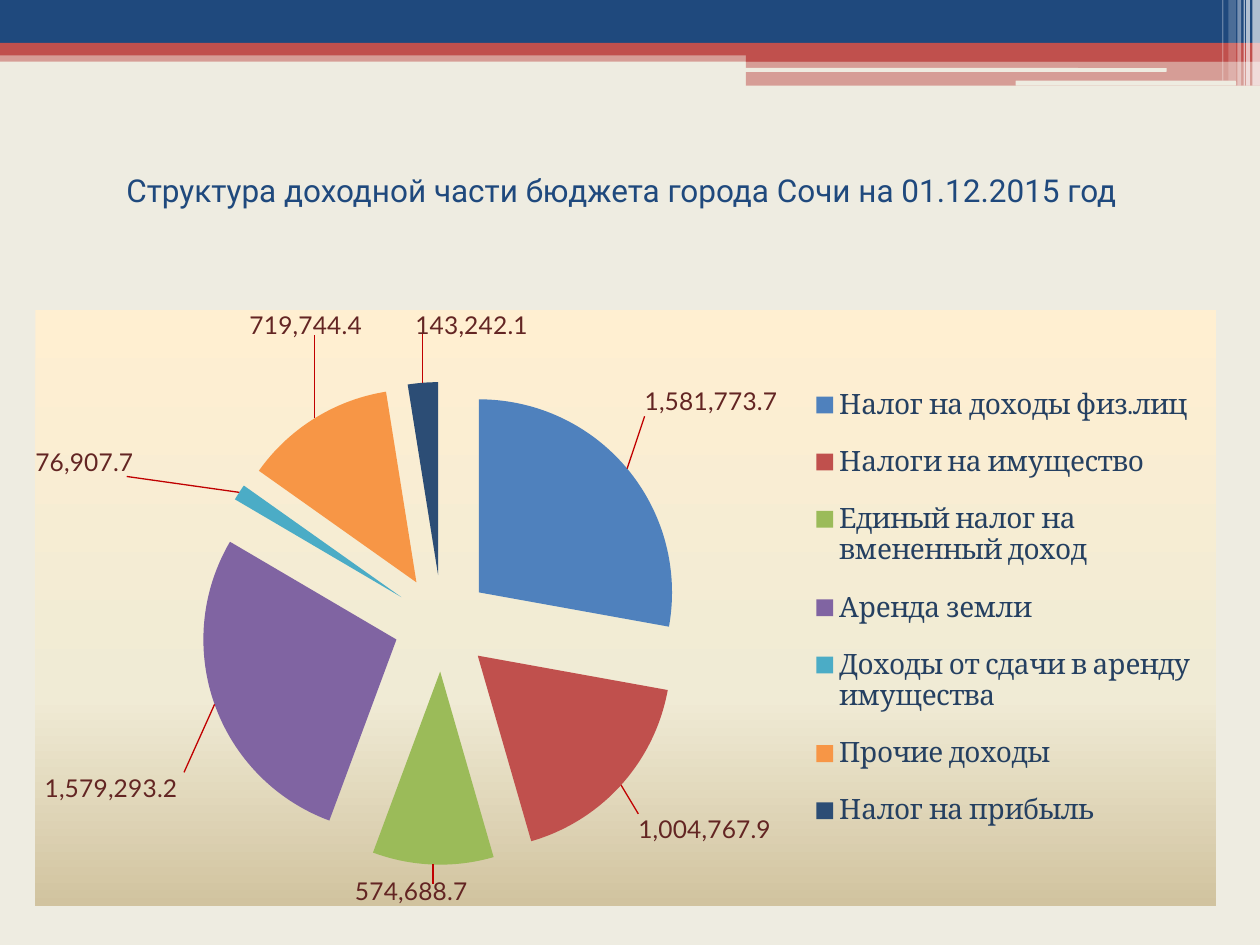
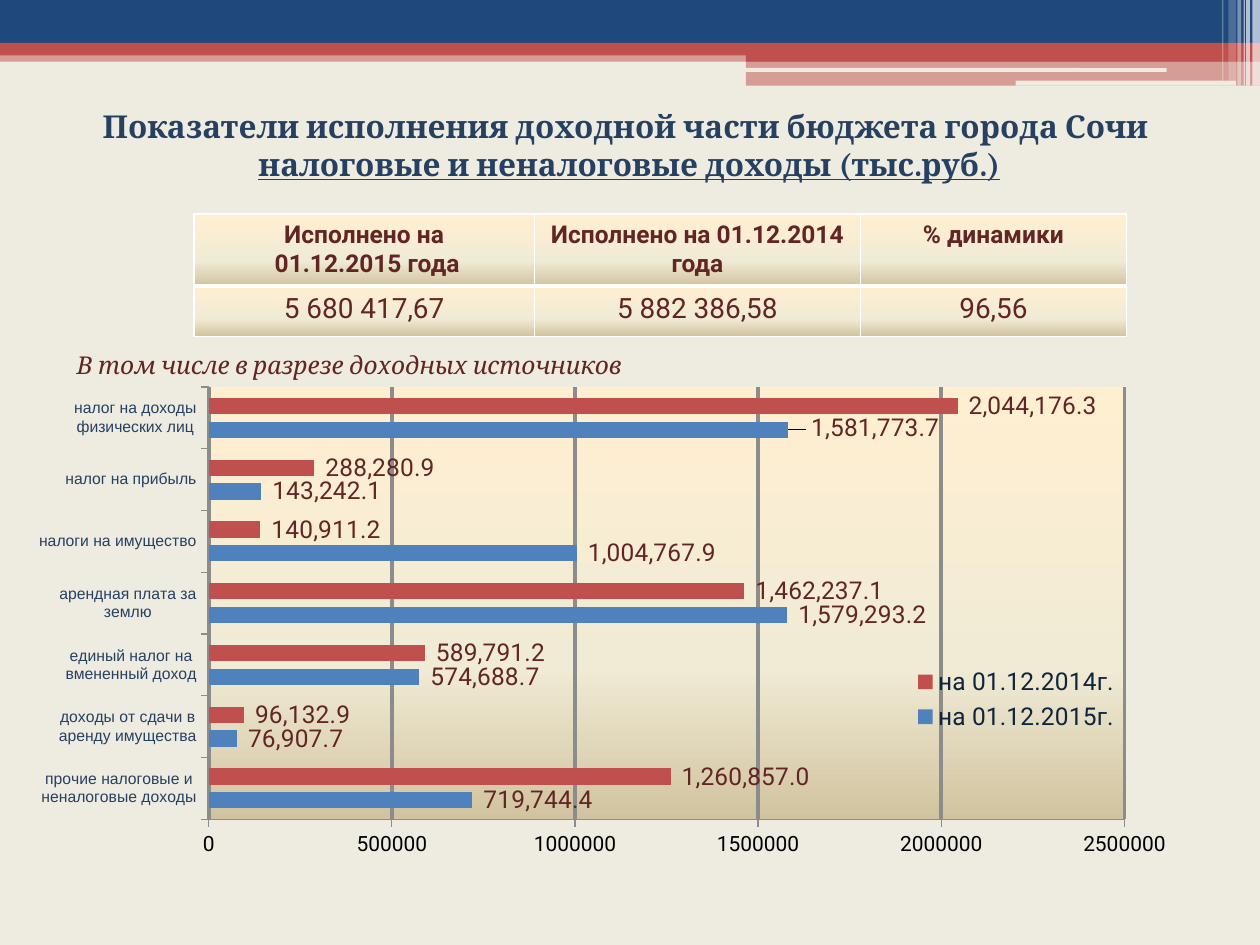
import pptx
import pptx.chart.data
import pptx.dml.color
import pptx.enum.chart
import pptx.enum.shapes
import pptx.enum.text
import pptx.oxml
import pptx.oxml.ns
import pptx.util
from pptx.util import Inches

COLOURS = {
    "paper": "EEECE1", "navy": "1F497D", "red": "C0504D", "white": "FFFFFF",
    "heading": "254061", "wine": "632523", "ink": "0F243E", "black": "000000",
    "grid": "8C8C8C", "leader": "C00000", "blue": "4F81BD", "green": "9BBB59",
    "violet": "8064A2", "teal": "4BACC6", "orange": "F79646", "deep": "2C4D75",
}
SAND = [(0, "FFEFD1"), (65, "F0EBD5"), (100, "D1C39F")]
NS = ('xmlns:a="http://schemas.openxmlformats.org/drawingml/2006/main" '
      'xmlns:c="http://schemas.openxmlformats.org/drawingml/2006/chart"')
SERIF, SANS = "Cambria", "Roboto"

# left, top, width, height, colour, opacity in percent
BANDS = [
    (0, 0.4, 10, 0.09, "red", 50),
    (0, 0, 10, 0.34, "navy", 100),
    (0, 0.34, 10, 0.1, "red", 100),
    (5.92, 0.39, 4.08, 0.1, "red", 100),
    (5.92, 0.48, 4.08, 0.2, "red", 50),
]
SLOTS = [(5.91, 0.54, 3.35, 0.03, "paper", 100), (8.06, 0.64, 1.75, 0.04, "paper", 100)]
STRIPES = [  # left, width, height, opacity
    (9.94, 0.06, 0.68, 65), (9.89, 0.03, 0.68, 65), (9.87, 0.01, 0.68, 60),
    (9.82, 0.03, 0.68, 40), (9.75, 0.06, 0.64, 20), (9.7, 0.01, 0.64, 30),
]


def rgb(name):
    return pptx.dml.color.RGBColor.from_string(COLOURS[name])


def xml(markup):
    """Build an element from markup whose first tag gets the namespaces."""
    head, rest = markup.split(">", 1)
    slash = "/" if head.endswith("/") else ""
    return pptx.oxml.parse_xml(f"{head.rstrip('/')} {NS}{slash}>{rest}")


def sand_fill():
    stops = "".join(f'<a:gs pos="{pos * 1000}"><a:srgbClr val="{colour}"/></a:gs>'
                    for pos, colour in SAND)
    return f'<a:gradFill><a:gsLst>{stops}</a:gsLst><a:lin ang="5400000" scaled="0"/></a:gradFill>'


def sand_properties():
    return xml(f"<c:spPr>{sand_fill()}<a:ln><a:noFill/></a:ln></c:spPr>")


def layout(x, y, w=None, h=None, inner=False):
    """Manual chart layout: a shift for a label, or a box on the chart edges."""
    target = '<c:layoutTarget val="inner"/>' if inner else ""
    modes = '<c:xMode val="edge"/><c:yMode val="edge"/>' if w else ""
    size = f'<c:w val="{w}"/><c:h val="{h}"/>' if w else ""
    return xml(f'<c:layout><c:manualLayout>{target}{modes}<c:x val="{x}"/>'
               f'<c:y val="{y}"/>{size}</c:manualLayout></c:layout>')


def set_font(font, size, colour, name, bold=False, italic=False, underline=False):
    font.size, font.name = pptx.util.Pt(size), name
    font.color.rgb = rgb(colour)
    font.bold, font.italic, font.underline = bold, italic, underline


def write(frame, text, align="LEFT", underlined_line=None, **style):
    """Fill a text frame, one paragraph per line of text."""
    for number, line in enumerate(text.split("\n")):
        paragraph = frame.paragraphs[0] if number == 0 else frame.add_paragraph()
        paragraph.alignment = getattr(pptx.enum.text.PP_ALIGN, align)
        run = paragraph.add_run()
        run.text = line
        set_font(run.font, underline=number == underlined_line, **style)


class Deck:
    def __init__(self):
        self.presentation = pptx.Presentation()
        self.presentation.slide_width = Inches(10)
        self.presentation.slide_height = Inches(7.5)
        self.slide = None

    def new_slide(self):
        self.slide = self.presentation.slides.add_slide(self.presentation.slide_layouts[6])
        background = self.slide.background.fill
        background.solid()
        background.fore_color.rgb = rgb("paper")
        for band in BANDS:
            self.block(*band)
        for slot in SLOTS:
            self.block(*slot, kind="ROUNDED_RECTANGLE")
        for left, width, height, opacity in STRIPES:
            self.block(left, 0, width, height, "white", opacity)

    def block(self, left, top, width, height, colour, opacity, kind="RECTANGLE"):
        block = self.slide.shapes.add_shape(
            getattr(pptx.enum.shapes.MSO_SHAPE, kind),
            Inches(left), Inches(top), Inches(width), Inches(height))
        block.shadow.inherit = False
        block.line.fill.background()
        block.fill.solid()
        block.fill.fore_color.rgb = rgb(colour)
        if opacity < 100:
            tint = block._element.spPr.find(".//" + pptx.oxml.ns.qn("a:srgbClr"))
            tint.append(xml(f'<a:alpha val="{opacity * 1000}"/>'))

    def text(self, left, top, width, height, text, anchor="TOP", **style):
        box = self.slide.shapes.add_textbox(
            Inches(left), Inches(top), Inches(width), Inches(height))
        box.text_frame.word_wrap = True
        box.text_frame.vertical_anchor = getattr(pptx.enum.text.MSO_ANCHOR, anchor)
        write(box.text_frame, text, **style)

    def table(self, left, top, widths, heights, rows):
        table = self.slide.shapes.add_table(
            len(rows), len(widths), Inches(left), Inches(top),
            Inches(sum(widths)), Inches(sum(heights))).table
        for column, width in zip(table.columns, widths):
            column.width = Inches(width)
        for number, (row, height) in enumerate(zip(rows, heights)):
            table.rows[number].height = Inches(height)
            head = number == 0
            for cell, text in zip(table.rows[number].cells, row):
                write(cell.text_frame, text, align="CENTER", size=14 if head else 16,
                      colour="wine", name=SANS, bold=head)
                properties = cell._tc.get_or_add_tcPr()
                for side in "LRTB":
                    heavy = (head and side == "B") or (not head and side == "T")
                    properties.append(xml(
                        f'<a:ln{side} w="{38100 if heavy else 12700}"><a:solidFill>'
                        f'<a:srgbClr val="{COLOURS["white"]}"/></a:solidFill></a:ln{side}>'))
                properties.append(xml(sand_fill()))

    def chart(self, kind, left, top, width, height, categories, series, plot_box,
              legend_box, legend_style):
        data = pptx.chart.data.CategoryChartData()
        data.categories = categories
        for name, values in series:
            data.add_series(name, values)
        chart = self.slide.shapes.add_chart(
            getattr(pptx.enum.chart.XL_CHART_TYPE, kind), Inches(left), Inches(top),
            Inches(width), Inches(height), data).chart
        chart.has_title = False
        set_font(chart.font, 18, "black", SERIF)
        area = chart._chartSpace.chart.plotArea
        for old in area.findall(pptx.oxml.ns.qn("c:layout")):
            area.remove(old)
        area.insert(0, layout(*plot_box, inner=True))
        chart.has_legend = True
        chart.legend.position = pptx.enum.chart.XL_LEGEND_POSITION.RIGHT
        chart.legend.include_in_layout = False
        set_font(chart.legend.font, **legend_style)
        legend = chart.legend._element
        for old in legend.findall(pptx.oxml.ns.qn("c:layout")):
            legend.remove(old)
        legend.find(pptx.oxml.ns.qn("c:legendPos")).addnext(layout(*legend_box))
        return chart

    def labels(self, series, number_format, style, position="OUTSIDE_END"):
        labels = series.data_labels
        labels.show_value = True
        labels.number_format, labels.number_format_is_linked = number_format, False
        labels.position = getattr(pptx.enum.chart.XL_LABEL_POSITION, position)
        set_font(labels.font, **style)
        return labels

    def shift_label(self, series, index, shift, number_format, style):
        label = series.points[index].data_label
        set_font(label.font, **style)
        label.position = pptx.enum.chart.XL_LABEL_POSITION.OUTSIDE_END
        place = layout(*shift)
        label._dLbl.find(pptx.oxml.ns.qn("c:idx")).addnext(place)
        place.addnext(xml(f'<c:numFmt formatCode="{number_format}" sourceLinked="0"/>'))


def income_structure(deck):
    deck.new_slide()
    deck.text(0.28, 0.92, 9.37, 1.17,
              "Структура доходной части бюджета города Сочи на 01.12.2015 год ",
              anchor="MIDDLE", align="CENTER", size=18, colour="navy", name=SANS)
    # source of income, amount, slice colour, label shift
    incomes = [
        ("Налог на доходы физ.лиц", 1581773.7, "blue", (0.01, -0.08)),
        ("Налоги на имущество", 1004767.9, "red", (0.01, 0.04)),
        ("Единый налог на вмененный доход", 574688.7, "green", (-0.01, 0.02)),
        ("Аренда земли", 1579293.2, "violet", (-0.02, 0.11)),
        ("Доходы от сдачи в аренду имущества", 76907.7, "teal", (-0.09, -0.02)),
        ("Прочие доходы", 719744.4, "orange", (0.06, -0.13)),
        ("Налог на прибыль", 143242.1, "deep", (0.05, -0.07)),
    ]
    names, amounts, colours, shifts = zip(*incomes)
    chart = deck.chart("PIE", 0.28, 2.46, 9.37, 4.73, names, [("Series 1", amounts)],
                       (0.067, 0.121, 0.555, 0.81), (0.65, 0.09, 0.34, 0.82),
                       dict(size=16, colour="heading", name=SERIF))
    chart._chartSpace.chart.addnext(sand_properties())
    pie = chart.plots[0].series[0]
    pie._element.find(pptx.oxml.ns.qn("c:tx")).addnext(xml('<c:explosion val="25"/>'))
    style, number_format = dict(size=14, colour="wine", name="Lato"), "#,##0.0_р_."
    labels = deck.labels(pie, number_format, style)
    for index, (colour, shift) in enumerate(zip(colours, shifts)):
        piece = pie.points[index].format.fill
        piece.solid()
        piece.fore_color.rgb = rgb(colour)
        deck.shift_label(pie, index, shift, number_format, style)
    group = labels._element
    for old in group.findall(pptx.oxml.ns.qn("c:showLeaderLines")):
        group.remove(old)
    group.append(xml('<c:showLeaderLines val="1"/>'))
    group.append(xml(f'<c:leaderLines><c:spPr><a:ln w="9525"><a:solidFill><a:srgbClr '
                     f'val="{COLOURS["leader"]}"/></a:solidFill></a:ln></c:spPr></c:leaderLines>'))


def income_performance(deck):
    deck.new_slide()
    sources = [  # source of income, 2015, 2014
        ("прочие налоговые и неналоговые доходы", 719744.4, 1260857.0),
        ("доходы от сдачи в аренду имущества", 76907.7, 96132.9),
        ("единый налог на вмененный доход", 574688.7, 589791.2),
        ("арендная плата за землю", 1579293.2, 1462237.1),
        ("налоги на имущество", 1004767.9, 140911.2),
        ("налог на прибыль", 143242.1, 288280.9),
        ("налог на доходы физических лиц", 1581773.7, 2044176.3),
    ]
    names, in_2015, in_2014 = zip(*sources)
    chart = deck.chart("BAR_CLUSTERED", 0.31, 2.94, 9.57, 4.54, names,
                       [("на 01.12.2015г.", in_2015), ("на 01.12.2014г.", in_2014)],
                       (0.139, 0.029, 0.761, 0.756), (0.72, 0.51, 0.18, 0.13),
                       dict(size=14, colour="ink", name=SANS))
    chart._chartSpace.chart.plotArea.append(sand_properties())
    bars = chart.plots[0]
    bars.gap_width, bars.overlap, bars.vary_by_categories = 134, -45, False
    style, number_format = dict(size=14, colour="wine", name=SANS), "_-* #,##0.0_р_._-"
    for series, colour in zip(bars.series, ("blue", "red")):
        series.format.fill.solid()
        series.format.fill.fore_color.rgb = rgb(colour)
        deck.labels(series, number_format, style)
    deck.shift_label(bars.series[0], 6, (0.01, -0.003), number_format, style)

    amounts = chart.value_axis
    amounts.minimum_scale, amounts.maximum_scale, amounts.major_unit = 0, 2500000, 500000
    amounts.tick_labels.number_format = "General"
    amounts.tick_labels.number_format_is_linked = False
    amounts.major_gridlines.format.line.width = pptx.util.Pt(2.25)
    amounts.major_gridlines.format.line.color.rgb = rgb("grid")
    set_font(amounts.tick_labels.font, 12, "black", SANS)
    set_font(chart.category_axis.tick_labels.font, 9, "heading", "Arial")
    for axis in (amounts, chart.category_axis):
        axis.major_tick_mark = pptx.enum.chart.XL_TICK_MARK.OUTSIDE
        axis.format.line.color.rgb = rgb("grid")
        axis.format.line.width = pptx.util.Pt(0.75)

    deck.text(0.31, 0.8, 9.37, 0.71,
              "Показатели исполнения доходной части бюджета города Сочи \n"
              "налоговые и неналоговые доходы (тыс.руб.)",
              align="CENTER", underlined_line=1, size=18, colour="heading", name=SERIF, bold=True)
    deck.table(1.54, 1.7, (2.7, 2.59, 2.11), (0.57, 0.4), [
        ("Исполнено на\n 01.12.2015 года", "Исполнено на 01.12.2014 года", "% динамики"),
        ("5 680 417,67", "5 882 386,58", "96,56"),
    ])
    deck.text(0.51, 2.73, 4.72, 0.34, "В том числе в разрезе доходных источников",
              size=14, colour="wine", name=SERIF, italic=True)


def main():
    deck = Deck()
    income_structure(deck)
    income_performance(deck)
    deck.presentation.save("out.pptx")


if __name__ == "__main__":
    main()
